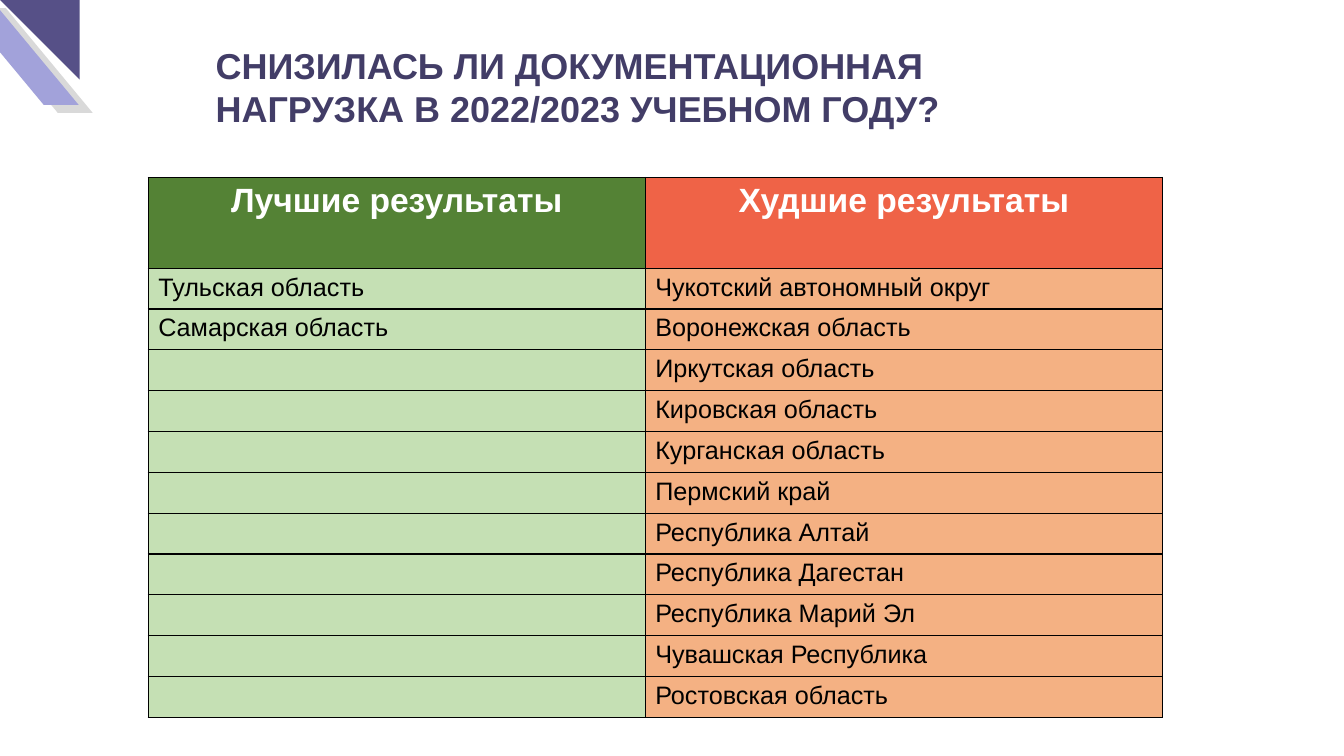
from dataclasses import dataclass
from itertools import zip_longest

import lxml.etree
import pptx
import pptx.dml.color
import pptx.enum.shapes
import pptx.enum.text
import pptx.oxml.ns
import pptx.util

Inches = pptx.util.Inches
Pt = pptx.util.Pt
Shape = pptx.enum.shapes.MSO_SHAPE
Align = pptx.enum.text.PP_ALIGN
qn = pptx.oxml.ns.qn


def rgb(value):
    return pptx.dml.color.RGBColor.from_string(value)


@dataclass(frozen=True)
class Theme:
    font: str = "Arial"
    title_size: float = 25.7
    header_size: float = 24
    body_size: float = 18
    title: str = "423D67"
    header_text: str = "FFFFFF"
    body_text: str = "000000"
    border: str = "000000"
    border_width: float = 1
    shade: str = "D9D9D9"
    stripe: str = "A2A2DA"
    corner: str = "565087"
    best_header: str = "548235"
    worst_header: str = "EF6347"
    best_body: str = "C5E0B4"
    worst_body: str = "F4B183"


THEME = Theme()
TITLE = "СНИЗИЛАСЬ ЛИ ДОКУМЕНТАЦИОННАЯ НАГРУЗКА В 2022/2023 УЧЕБНОМ ГОДУ?"
HEADERS = ("Лучшие результаты", "Худшие результаты")
BEST = ("Тульская область", "Самарская область")
WORST = (
    "Чукотский автономный округ",
    "Воронежская область",
    "Иркутская область",
    "Кировская область",
    "Курганская область",
    "Пермский край",
    "Республика Алтай",
    "Республика Дагестан",
    "Республика Марий Эл",
    "Чувашская Республика",
    "Ростовская область",
)


def write_text(para, text, size, color, bold, align=Align.LEFT):
    para.alignment = align
    target = para.add_run() if text else para
    if text:
        target.text = text
    formats = {"name": THEME.font, "size": Pt(size), "bold": bold}
    for name, value in formats.items():
        setattr(target.font, name, value)
    target.font.color.rgb = rgb(color)


def add_plain_shape(page, kind, box, color):
    shape = page.shapes.add_shape(kind, *(Inches(length) for length in box))
    shape.shadow.inherit = False
    shape.fill.solid()
    shape.fill.fore_color.rgb = rgb(color)
    shape.line.fill.background()
    return shape


def add_corner(page, box):
    left, top, width, height = box
    stripes = ((-0.29, 0.08, THEME.shade), (-0.43, 0, THEME.stripe))
    for shift_x, shift_y, color in stripes:
        stripe_box = (left + shift_x, top + shift_y, 1.21, 1.04)
        stripe = add_plain_shape(page, Shape.PARALLELOGRAM, stripe_box, color)
        stripe.adjustments[0] = 0.83
        stripe.element.spPr.find(qn("a:xfrm")).set("flipH", "1")
    triangle = add_plain_shape(page, Shape.RIGHT_TRIANGLE, box, THEME.corner)
    triangle.rotation = 180


def add_title(page, box):
    title = page.shapes.add_textbox(*(Inches(length) for length in box))
    frame = title.text_frame
    frame.word_wrap = True
    frame.auto_size = pptx.enum.text.MSO_AUTO_SIZE.SHAPE_TO_FIT_TEXT
    write_text(frame.paragraphs[0], TITLE, THEME.title_size, THEME.title, True)


def set_borders(cell):
    properties = cell._tc.get_or_add_tcPr()
    for side in ("a:lnL", "a:lnR", "a:lnT", "a:lnB"):
        line = lxml.etree.SubElement(properties, qn(side), w=str(Pt(THEME.border_width)))
        fill = lxml.etree.SubElement(line, qn("a:solidFill"))
        lxml.etree.SubElement(fill, qn("a:srgbClr"), val=THEME.border)


def fill_cell(cell, fill, *text_format):
    set_borders(cell)
    cell.fill.solid()
    cell.fill.fore_color.rgb = rgb(fill)
    write_text(cell.text_frame.paragraphs[0], *text_format)


def add_results(page, box, header_height=0.9, best_share=0.49):
    left, top, width, height = box
    regions = list(zip_longest(BEST, WORST, fillvalue=""))
    frame = page.shapes.add_table(len(regions) + 1, 2, *(Inches(length) for length in box))
    table = frame.table
    table.horz_banding = False
    for column, share in zip(table.columns, (best_share, 1 - best_share)):
        column.width = Inches(width * share)
    for row in table.rows:
        row.height = Inches((height - header_height) / len(regions))
    table.rows[0].height = Inches(header_height)
    header_fills = (THEME.best_header, THEME.worst_header)
    body_fills = (THEME.best_body, THEME.worst_body)
    for index, text in enumerate(HEADERS):
        fill_cell(table.cell(0, index), header_fills[index], text,
                  THEME.header_size, THEME.header_text, True, Align.CENTER)
    for number, names in enumerate(regions, 1):
        for index, text in enumerate(names):
            fill_cell(table.cell(number, index), body_fills[index], text,
                      THEME.body_size, THEME.body_text, False)


def main():
    deck = pptx.Presentation()
    deck.slide_width = Inches(13.33)
    deck.slide_height = Inches(7.5)
    page = deck.slides.add_slide(deck.slide_layouts[6])
    add_corner(page, (0, 0, 0.79, 0.79))
    add_results(page, (1.47, 1.76, 10.06, 5.36))
    add_title(page, (2.04, 0.38, 7.84, 0.96))
    deck.save("out.pptx")


if __name__ == "__main__":
    main()
